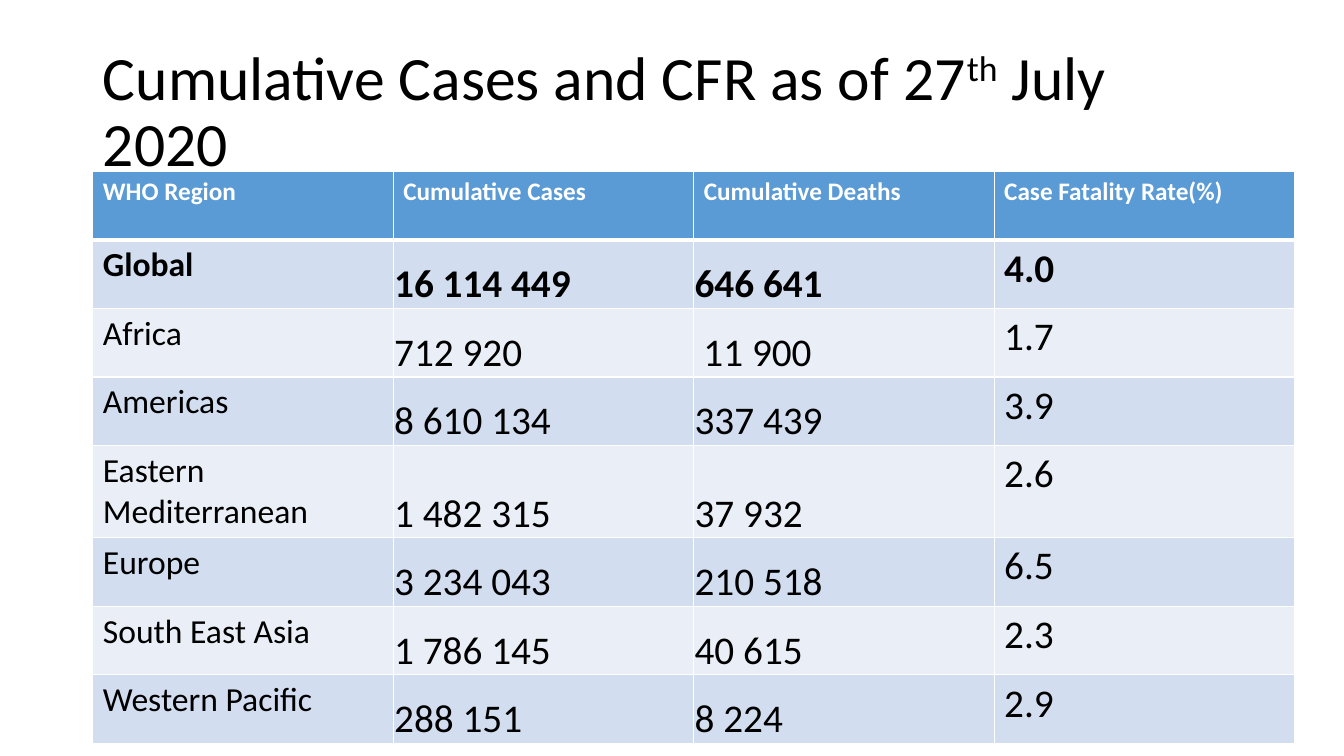
import pptx
import pptx.dml.color
import pptx.enum.text
import pptx.oxml
import pptx.oxml.ns
import pptx.util

FONT = "Calibri"
WIDTH, HEIGHT = 13.33, 7.5
LEFT, TABLE_TOP = 0.92, 1.7
COLUMN, ROW = 2.98, 0.68
HEADER_FILL, BAND_FILLS = "5B9BD5", ("D2DEEF", "EAEFF7")
HEADINGS = ("WHO Region", "Cumulative Cases", "Cumulative Deaths", "Case Fatality Rate(%)")
REGIONS = (
    ("Global", "16 114 449", "646 641", "4.0"),
    ("Africa", "712 920", " 11 900", "1.7"),
    ("Americas", "8 610 134", "337 439", "3.9"),
    ("Eastern Mediterranean", "1 482 315", "37 932", "2.6"),
    ("Europe", "3 234 043", "210 518", "6.5"),
    ("South East Asia", "1 786 145", "40 615", "2.3"),
    ("Western Pacific", "288 151", "8 224", "2.9"),
)


def inches(value):
    return pptx.util.Inches(value)


def color(code):
    return pptx.dml.color.RGBColor.from_string(code)


def write(para, text, size=18, bold=False, ink="000000", raised=False):
    span = para.add_run()
    span.text = text
    span.font.name = FONT
    span.font.size = pptx.util.Pt(size)
    span.font.bold = bold
    span.font.color.rgb = color(ink)
    if raised:
        span.font._element.set("baseline", "30000")


def border(cell, side, points):
    line = pptx.oxml.parse_xml(
        f'<a:ln{side} {pptx.oxml.ns.nsdecls("a")} w="{pptx.util.Pt(points)}">'
        f'<a:solidFill><a:srgbClr val="FFFFFF"/></a:solidFill></a:ln{side}>'
    )
    cell._tc.get_or_add_tcPr().append(line)


def format_cell(cell, fill, top=1, bottom=1):
    for side, points in (("L", 1), ("R", 1), ("T", top), ("B", bottom)):
        border(cell, side, points)
    cell.fill.solid()
    cell.fill.fore_color.rgb = color(fill)


def sit_on_bottom(cell):
    cell.vertical_anchor = pptx.enum.text.MSO_ANCHOR.BOTTOM
    cell.margin_left = cell.margin_right = cell.margin_top = inches(0.01)
    cell.margin_bottom = 0


def add_title(page):
    title = page.shapes.title
    title.left, title.top = inches(LEFT), inches(0.4)
    title.width, title.height = inches(11.5), inches(1.45)
    frame = title.text_frame
    frame.word_wrap = True
    frame.auto_size = pptx.enum.text.MSO_AUTO_SIZE.NONE
    frame.vertical_anchor = pptx.enum.text.MSO_ANCHOR.MIDDLE
    para = frame.paragraphs[0]
    para.alignment = pptx.enum.text.PP_ALIGN.LEFT
    para.line_spacing = 0.9
    write(para, "Cumulative Cases and CFR as of 27", size=44)
    write(para, "th", size=44, raised=True)
    write(para, " July 2020", size=44)


def add_region_table(page):
    rows, columns = len(REGIONS) + 1, len(HEADINGS)
    table = page.shapes.add_table(
        rows, columns, inches(LEFT), inches(TABLE_TOP),
        inches(COLUMN * columns), inches(ROW * rows),
    ).table
    for column, heading in enumerate(HEADINGS):
        cell = table.cell(0, column)
        format_cell(cell, HEADER_FILL, bottom=3)
        write(cell.text_frame.paragraphs[0], heading, bold=True, ink="FFFFFF")
    for row, values in enumerate(REGIONS, start=1):
        for column, value in enumerate(values):
            cell = table.cell(row, column)
            format_cell(cell, BAND_FILLS[(row - 1) % 2], top=3 if row == 1 else 1)
            if column in (1, 2):
                sit_on_bottom(cell)
            write(cell.text_frame.paragraphs[0], value,
                  size=24 if column == 0 else 28, bold=row == 1)


def main():
    deck = pptx.Presentation()
    deck.slide_width, deck.slide_height = inches(WIDTH), inches(HEIGHT)
    page = deck.slides.add_slide(deck.slide_layouts[5])
    add_title(page)
    add_region_table(page)
    deck.save("out.pptx")


if __name__ == "__main__":
    main()
